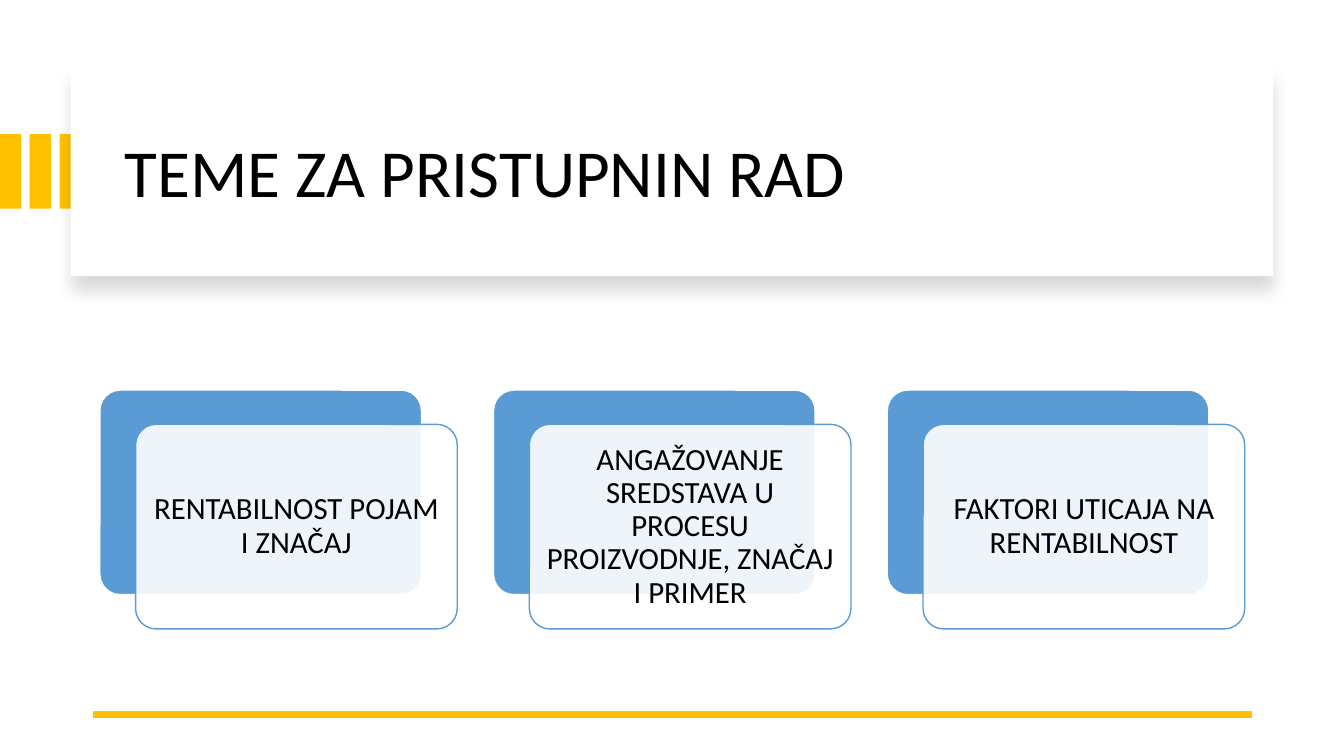
from dataclasses import dataclass

from lxml import etree
from pptx import Presentation
from pptx.dml.color import RGBColor
from pptx.enum.shapes import MSO_CONNECTOR, MSO_SHAPE
from pptx.enum.text import MSO_ANCHOR, PP_ALIGN
from pptx.oxml.ns import qn
from pptx.util import Inches, Pt

RECTANGLE, ROUNDED = MSO_SHAPE.RECTANGLE, MSO_SHAPE.ROUNDED_RECTANGLE
STRAIGHT = MSO_CONNECTOR.STRAIGHT
MIDDLE = MSO_ANCHOR.MIDDLE
LEFT, CENTER = PP_ALIGN.LEFT, PP_ALIGN.CENTER


@dataclass(frozen=True)
class Theme:
    font: str = "Calibri"
    title_size: int = 48
    card_size: int = 22
    text: str = "000000"
    paper: str = "FFFFFF"
    accent: str = "FFC000"
    card: str = "5B9BD5"


THEME = Theme()
SLIDE_WIDTH, SLIDE_HEIGHT = 13.33, 7.5

STRIPE_COUNT, STRIPE_STEP = 3, 0.295
STRIPE_TOP, STRIPE_WIDTH, STRIPE_HEIGHT = 1.33, 0.21, 0.74

CARD_LEFT, CARD_TOP, CARD_STEP = 0.99, 3.87, 3.905
CARD_WIDTH, CARD_HEIGHT = 3.19, 2.03
CARD_SHIFT_X, CARD_SHIFT_Y = 0.355, 0.34

TITLE = "TEME ZA PRISTUPNIN RAD"
TOPICS = (
    "RENTABILNOST POJAM I ZNAČAJ",
    "ANGAŽOVANJE SREDSTAVA U PROCESU PROIZVODNJE, ZNAČAJ I PRIMER",
    "FAKTORI UTICAJA NA RENTABILNOST",
)


def color(value):
    return RGBColor.from_string(value)


def add_block(page, kind, area, fill, line=None):
    block = page.shapes.add_shape(kind, *map(Inches, area))
    block.shadow.inherit = False
    block.fill.solid()
    block.fill.fore_color.rgb = color(fill)
    if line:
        block.line.color.rgb = color(line)
        block.line.width = Pt(1)
    else:
        block.line.fill.background()
    if kind == ROUNDED:
        block.adjustments[0] = 0.1
    return block


def set_opacity(block, percent):
    fill_color = block.fill._xPr.find(qn("a:solidFill"))[0]
    etree.SubElement(fill_color, qn("a:alpha"), val=str(percent * 1000))


def add_soft_shadow(block):
    """Cast a faint shadow straight down from the block."""
    effects = block._element.spPr.find(qn("a:effectLst"))
    shadow = etree.SubElement(
        effects, qn("a:outerShdw"), blurRad=str(Pt(11)), dist=str(Pt(10)),
        dir="5400000", algn="t", rotWithShape="0")
    shade = etree.SubElement(shadow, qn("a:srgbClr"), val=THEME.text)
    etree.SubElement(shade, qn("a:alpha"), val="15000")


def write(box, text, size, align, inset):
    frame = box.text_frame
    frame_format = {"word_wrap": True, "vertical_anchor": MIDDLE}
    for side in ("left", "right", "top", "bottom"):
        frame_format[f"margin_{side}"] = Inches(inset)
    para = frame.paragraphs[0]
    span = para.add_run()
    span.text = text
    span.font.color.rgb = color(THEME.text)
    formats = (
        (frame, frame_format),
        (para, {"alignment": align, "line_spacing": 0.9}),
        (span.font, {"name": THEME.font, "size": Pt(size)}),
    )
    for target, values in formats:
        for name, value in values.items():
            setattr(target, name, value)


def add_header(page):
    for index in range(STRIPE_COUNT):
        area = (index * STRIPE_STEP, STRIPE_TOP, STRIPE_WIDTH, STRIPE_HEIGHT)
        add_block(page, RECTANGLE, area, THEME.accent)
    panel = add_block(page, RECTANGLE, (0.7, 0.67, 11.93, 2.07), THEME.paper)
    add_soft_shadow(panel)
    title = page.shapes.add_textbox(*map(Inches, (1.14, 0.89, 11.13, 1.7)))
    write(title, TITLE, THEME.title_size, LEFT, 0.1)


def add_footer_line(page):
    ends = map(Inches, (12.42, 7.09, 0.92, 7.09))
    rule = page.shapes.add_connector(STRAIGHT, *ends)
    rule.line.color.rgb = color(THEME.accent)
    rule.line.width = Pt(4.5)
    etree.SubElement(rule._element.spPr, qn("a:effectLst"))


def add_topic_card(page, column, topic):
    """Place a solid card with a translucent, captioned card shifted over it."""
    left = CARD_LEFT + column * CARD_STEP
    size = (CARD_WIDTH, CARD_HEIGHT)
    add_block(page, ROUNDED, (left, CARD_TOP, *size), THEME.card, THEME.paper)
    area = (left + CARD_SHIFT_X, CARD_TOP + CARD_SHIFT_Y, *size)
    front = add_block(page, ROUNDED, area, THEME.paper, THEME.card)
    set_opacity(front, 90)
    write(front, topic, THEME.card_size, CENTER, 0.09)


def main():
    deck = Presentation()
    deck.slide_width = Inches(SLIDE_WIDTH)
    deck.slide_height = Inches(SLIDE_HEIGHT)
    page = deck.slides.add_slide(deck.slide_layouts[6])
    add_header(page)
    add_footer_line(page)
    for column, topic in enumerate(TOPICS):
        add_topic_card(page, column, topic)
    deck.save("out.pptx")


if __name__ == "__main__":
    main()
